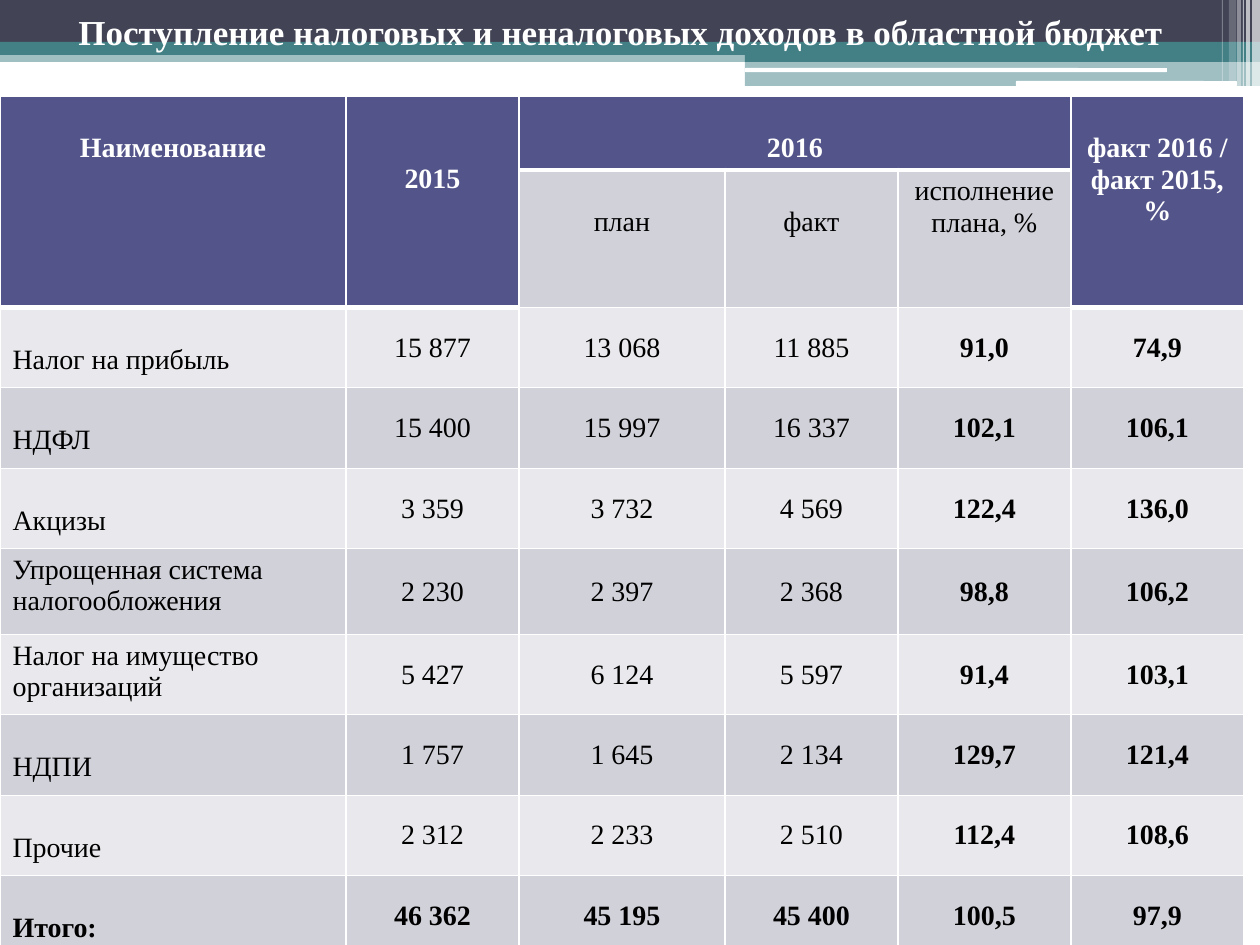
from lxml import etree
from pptx import Presentation, util as u
from pptx.dml.color import RGBColor
from pptx.enum import shapes, text
from pptx.oxml.ns import qn

HUE = {"navy": "424456", "teal": "438086", "white": "FFFFFF", "black": "000000",
       "head": "53548A", "dark": "D1D1DA", "light": "E9E9ED"}
LINE = 31  # height of one line of table text
PAD = 6
FACE = "Times New Roman"


def px(n):
    return u.Inches(n / 126)


def write(cell, words, **form):
    """Put words in a text frame; form holds size, bold, hue and align."""
    par = cell.text_frame.paragraphs[0]
    par.alignment = form.pop("align")
    run = par.add_run()
    run.text = words
    run.font.color.rgb = RGBColor.from_string(HUE[form.pop("hue")])
    for key, val in form.items():
        setattr(run.font, key, val)
    run.font.name = FACE


deck = Presentation()
deck.slide_width, deck.slide_height = px(1260), px(945)
slide = deck.slides.add_slide(deck.slide_layouts[6])

# Banner: left, top, width, height, colour, opacity in percent
rect, round_ = shapes.MSO_SHAPE.RECTANGLE, shapes.MSO_SHAPE.ROUNDED_RECTANGLE
bars = [
    (rect, 0, 50, 1260, 12, "teal", 50),
    (rect, 0, 0, 1260, 42, "navy", 100),
    (rect, 0, 42, 1260, 13, "teal", 100),
    (rect, 745, 49, 515, 13, "teal", 100),
    (rect, 745, 61, 515, 25, "teal", 50),
    (round_, 745, 68, 422, 4, "white", 100),
    (round_, 1016, 81, 221, 5, "white", 100),
]
stripes = [(1252, 8, 86, 65), (1246, 4, 86, 65), (1243, 1, 86, 60),
           (1237, 4, 86, 40), (1229, 7, 81, 20), (1222, 1, 81, 30)]
bars += [(rect, x, 0, w, h, "white", alpha) for x, w, h, alpha in stripes]

for kind, x, y, w, h, hue, alpha in bars:
    bar = slide.shapes.add_shape(kind, px(x), px(y), px(w), px(h))
    bar.shadow.inherit = False
    bar.line.fill.background()
    bar.fill.solid()
    bar.fill.fore_color.rgb = RGBColor.from_string(HUE[hue])
    if alpha < 100:
        tone = bar.fill._xPr.find(".//" + qn("a:srgbClr"))
        etree.SubElement(tone, qn("a:alpha"), val=str(alpha * 1000))

# Title, set high in its box
title = slide.shapes.add_textbox(0, 0, px(1260), px(106))
frame = {"word_wrap": True, "vertical_anchor": text.MSO_ANCHOR.MIDDLE,
         "margin_top": px(PAD), "margin_bottom": px(50), "margin_right": px(31)}
for key, val in frame.items():
    setattr(title.text_frame, key, val)
write(title, "Поступление налоговых и неналоговых доходов в областной бюджет",
      size=u.Pt(20), bold=True, hue="white", align=text.PP_ALIGN.CENTER)

# Table
data = [
    ["Наименование", "2015", "2016", "", "", "факт 2016 / факт 2015, %"],
    ["", "", "план", "факт", "исполнение плана, %", ""],
    ["Налог на прибыль", "15 877", "13 068", "11 885", "91,0", "74,9"],
    ["НДФЛ", "15 400", "15 997", "16 337", "102,1", "106,1"],
    ["Акцизы", "3 359", "3 732", "4 569", "122,4", "136,0"],
    ["Упрощенная система налогообложения", "2 230", "2 397", "2 368", "98,8", "106,2"],
    ["Налог на имущество организаций", "5 427", "6 124", "5 597", "91,4", "103,1"],
    ["НДПИ", "1 757", "1 645", "2 134", "129,7", "121,4"],
    ["Прочие", "2 312", "2 233", "2 510", "112,4", "108,6"],
    ["Итого:", "46 362", "45 195", "45 400", "100,5", "97,9"],
]
last = len(data) - 1
wide = [346, 173, 206, 173, 173, 173]
high = [74, 137, 80, 81, 80, 86, 80, 81, 80, 70]
drop = {"2015": 2, "исполнение плана, %": 0, data[5][0]: 0, data[6][0]: 0}

table = slide.shapes.add_table(len(high), len(wide), 0, px(96),
                               px(sum(wide)), px(sum(high))).table
for col, w in zip(table.columns, wide):
    col.width = px(w)
for row, h in zip(table.rows, high):
    row.height = px(h)
for top, left, low, right in [(0, 0, 1, 0), (0, 1, 1, 1), (0, 2, 0, 4), (0, 5, 1, 5)]:
    table.cell(top, left).merge(table.cell(low, right))

for r, line in enumerate(data):
    for c, words in enumerate(line):
        cell = table.cell(r, c)
        head = r == 0 or (r == 1 and c in (0, 1, 5))
        for side in "LRTB":
            thick = 3 if head and side == "B" else 1
            edge = etree.SubElement(cell._tc.get_or_add_tcPr(), qn("a:ln" + side),
                                    w=str(u.Pt(thick)))
            ink = etree.SubElement(edge, qn("a:solidFill"))
            etree.SubElement(ink, qn("a:srgbClr"), val=HUE["white"])
        hue = "head" if head else "dark" if r % 2 else "light"
        cell.fill.solid()
        cell.fill.fore_color.rgb = RGBColor.from_string(HUE[hue])
        cell.margin_bottom = 0
        if not words:
            continue
        if r > 1 and c > 0:
            cell.vertical_anchor = text.MSO_ANCHOR.MIDDLE
            cell.margin_left = cell.margin_right = 0
            cell.margin_top = px(11 if r == last else 0)
        else:
            cell.margin_top = px(PAD + LINE * drop.get(words, 1))
        write(cell, words, size=u.Pt(16),
              bold=head or r == last or (r > 1 and c > 3),
              hue="white" if head else "black",
              align=text.PP_ALIGN.LEFT if r > 1 and c == 0 else text.PP_ALIGN.CENTER)

deck.save("out.pptx")
